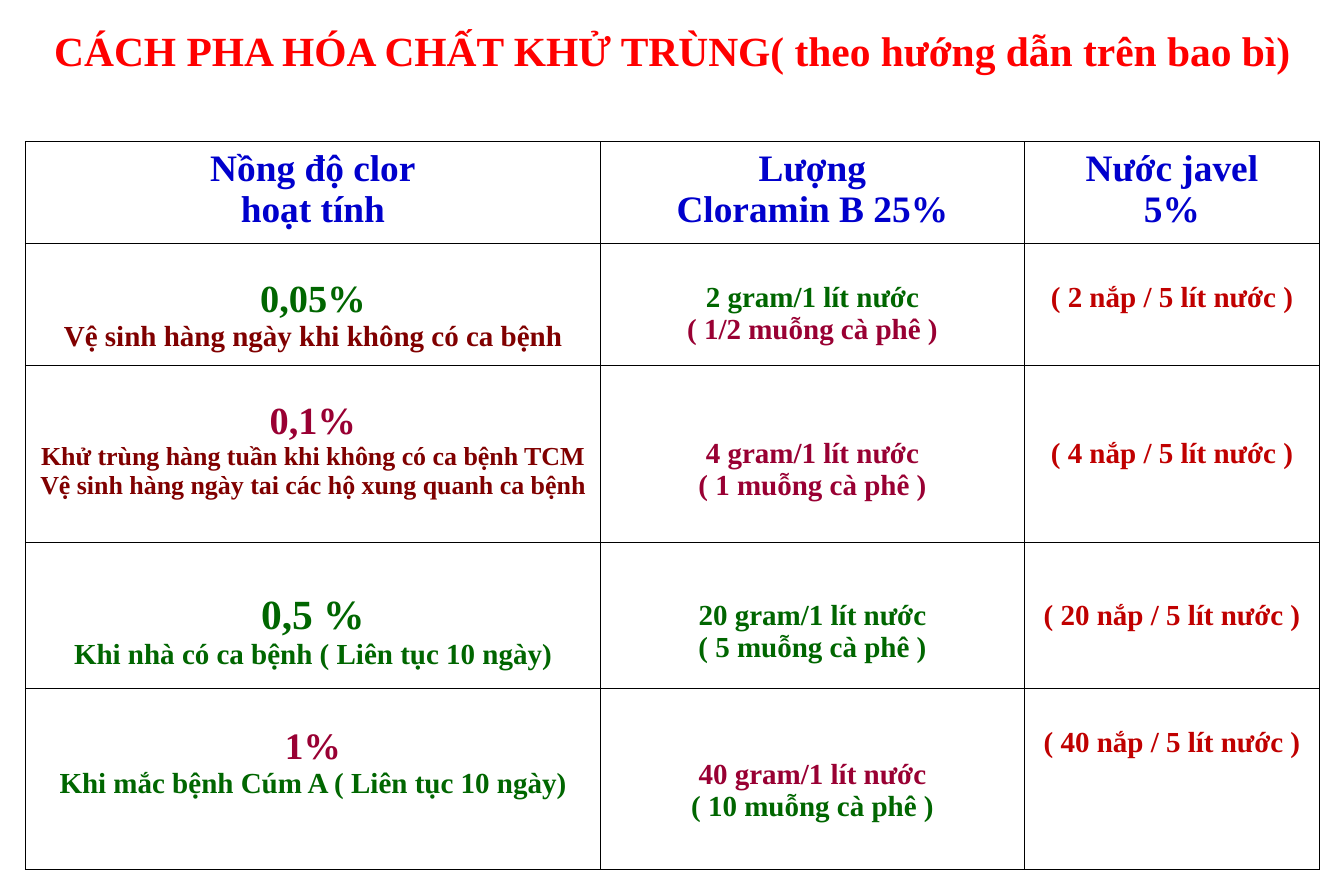
import pptx
import pptx.dml.color
import pptx.enum.text
import pptx.oxml
import pptx.oxml.ns
import pptx.util
from dataclasses import dataclass

Inches = pptx.util.Inches


@dataclass(frozen=True)
class Theme:
    font: str = "Times New Roman"
    red: str = "FF0000"
    blue: str = "0000CC"
    green: str = "006600"
    crimson: str = "990033"
    maroon: str = "800000"
    dark_red: str = "C00000"
    border: str = "000000"
    title: int = 40
    header: int = 36
    strong: int = 37
    body: int = 28
    small: int = 25


THEME = Theme()


@dataclass(frozen=True)
class Line:
    text: str
    color: str
    size: int = THEME.body


@dataclass(frozen=True)
class Entry:
    lines: list[Line]
    top: float = 0.08  # inset above the text, in inches


def header(*texts: str) -> Entry:
    return Entry([Line(text, THEME.blue, THEME.header) for text in texts])


def javel(caps: int, top: float) -> Entry:
    return Entry([Line(f"( {caps} nắp / 5 lít nước )", THEME.dark_red)], top)


def cloramin(grams: int, spoons: str, colors: tuple[str, str], top: float) -> Entry:
    return Entry([Line(f"{grams} gram/1 lít nước", colors[0]),
                  Line(f"( {spoons} muỗng cà phê )", colors[1])], top)


COLUMN_WIDTHS = [7.7, 5.68, 3.95]
ROW_HEIGHTS = [1.27, 1.61, 2.37, 1.96, 2.42]
ROWS = [
    [header("Nồng độ clor", "hoạt tính"),
     header("Lượng", "Cloramin B 25%"),
     header("Nước javel", "5%")],
    [Entry([Line("0,05%", THEME.green, THEME.strong),
            Line("Vệ sinh hàng ngày khi không có ca bệnh", THEME.maroon)], 0.47),
     cloramin(2, "1/2", (THEME.green, THEME.crimson), 0.51),
     javel(2, 0.51)],
    [Entry([Line("0,1%", THEME.crimson, THEME.strong),
            Line("Khử trùng hàng tuần khi không có ca bệnh TCM", THEME.maroon, THEME.small),
            Line("Vệ sinh hàng ngày tai các hộ xung quanh ca bệnh", THEME.maroon, THEME.small)],
           0.47),
     cloramin(4, "1", (THEME.crimson, THEME.crimson), 0.97),
     javel(4, 0.97)],
    [Entry([Line("0,5 %", THEME.green, THEME.title),
            Line("Khi nhà có ca bệnh ( Liên tục 10 ngày)", THEME.green)], 0.67),
     cloramin(20, "5", (THEME.green, THEME.green), 0.77),
     javel(20, 0.77)],
    [Entry([Line("1%", THEME.crimson, THEME.header),
            Line("Khi mắc bệnh Cúm A ( Liên tục 10 ngày)", THEME.green)], 0.51),
     cloramin(40, "10", (THEME.crimson, THEME.green), 0.94),
     javel(40, 0.51)],
]


def write_lines(frame: pptx.text.text.TextFrame, lines: list[Line]) -> None:
    for index, line in enumerate(lines):
        para = frame.add_paragraph() if index else frame.paragraphs[0]
        para.alignment = pptx.enum.text.PP_ALIGN.CENTER
        span = para.add_run()
        span.text = line.text
        span.font.name = THEME.font
        span.font.size = pptx.util.Pt(line.size)
        span.font.bold = True
        span.font.color.rgb = pptx.dml.color.RGBColor.from_string(line.color)


def add_borders(cell: pptx.table._Cell) -> None:
    properties = cell._tc.get_or_add_tcPr()
    for side in ("lnL", "lnR", "lnT", "lnB"):
        properties.append(pptx.oxml.parse_xml(
            f'<a:{side} {pptx.oxml.ns.nsdecls("a")} w="{pptx.util.Pt(1)}">'
            f'<a:solidFill><a:srgbClr val="{THEME.border}"/></a:solidFill></a:{side}>'))


def fill_cell(cell: pptx.table._Cell, entry: Entry) -> None:
    add_borders(cell)
    cell.fill.background()
    cell.margin_left = cell.margin_right = Inches(0.18)
    cell.margin_top = Inches(entry.top)
    cell.margin_bottom = Inches(0.08)
    write_lines(cell.text_frame, entry.lines)


def add_title(page: pptx.slide.Slide) -> None:
    box = page.shapes.add_textbox(Inches(0.41), Inches(0.3), Inches(17.19), Inches(0.74))
    frame = box.text_frame
    frame.word_wrap = True
    frame.vertical_anchor = pptx.enum.text.MSO_ANCHOR.MIDDLE
    frame.margin_left = frame.margin_right = Inches(0.16)
    frame.margin_top = frame.margin_bottom = Inches(0.08)
    write_lines(frame, [Line("CÁCH PHA HÓA CHẤT KHỬ TRÙNG( theo hướng dẫn trên bao bì)",
                             THEME.red, THEME.title)])


def add_dosage_table(page: pptx.slide.Slide) -> None:
    table = page.shapes.add_table(
        len(ROW_HEIGHTS), len(COLUMN_WIDTHS), Inches(0.34), Inches(1.9),
        Inches(sum(COLUMN_WIDTHS)), Inches(sum(ROW_HEIGHTS))).table
    table.first_row = table.horz_banding = False
    for column, width in zip(table.columns, COLUMN_WIDTHS):
        column.width = Inches(width)
    for row, height, entries in zip(table.rows, ROW_HEIGHTS, ROWS):
        row.height = Inches(height)
        for cell, entry in zip(row.cells, entries):
            fill_cell(cell, entry)


def main() -> None:
    deck = pptx.Presentation()
    deck.slide_width, deck.slide_height = Inches(18), Inches(12)
    page = deck.slides.add_slide(deck.slide_layouts[6])
    # Heading
    add_title(page)
    # Dosage by chlorine concentration
    add_dosage_table(page)
    deck.save("out.pptx")


if __name__ == "__main__":
    main()
